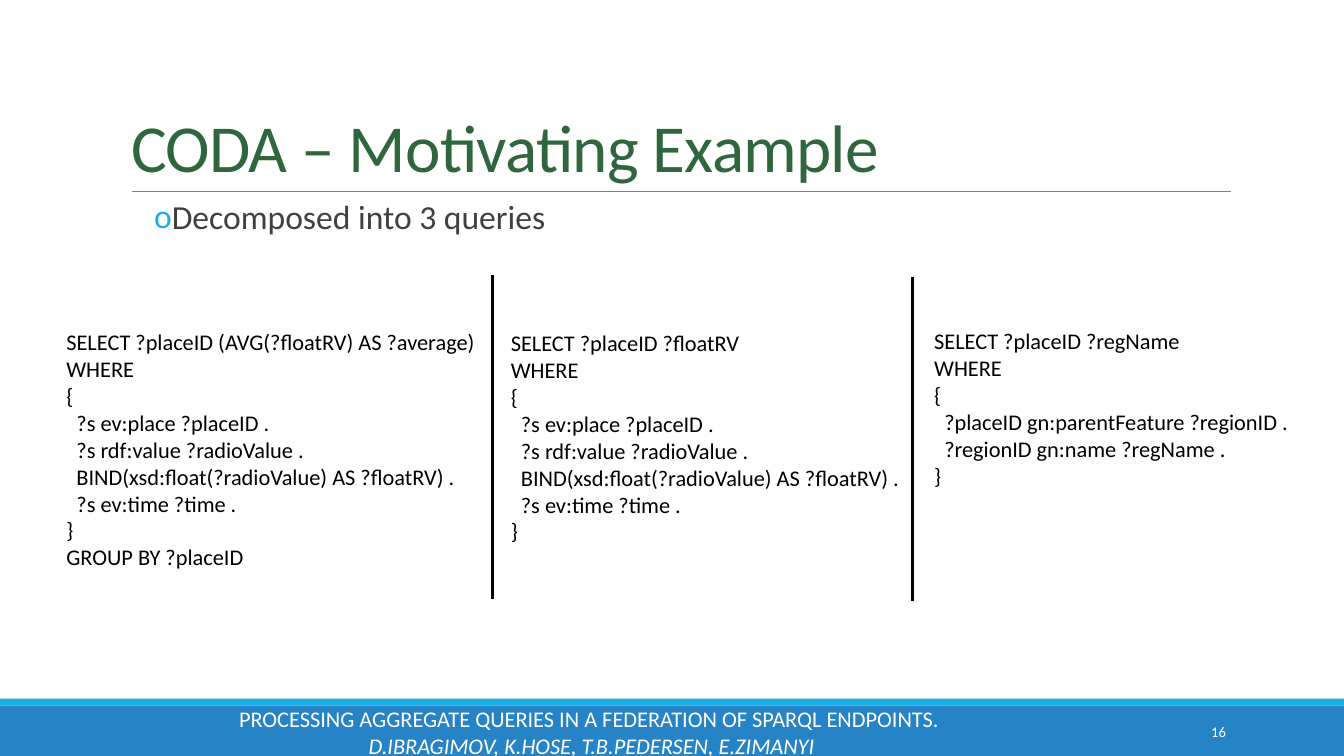
from dataclasses import dataclass

from lxml import etree
from pptx import Presentation
from pptx.dml.color import RGBColor
from pptx.enum.shapes import MSO_CONNECTOR, MSO_SHAPE
from pptx.enum.text import MSO_ANCHOR, MSO_AUTO_SIZE, PP_ALIGN
from pptx.oxml.ns import qn
from pptx.util import Pt

LEFT, CENTER, RIGHT = PP_ALIGN.LEFT, PP_ALIGN.CENTER, PP_ALIGN.RIGHT
TOP, MIDDLE, BOTTOM = MSO_ANCHOR.TOP, MSO_ANCHOR.MIDDLE, MSO_ANCHOR.BOTTOM
RECT, STRAIGHT = MSO_SHAPE.RECTANGLE, MSO_CONNECTOR.STRAIGHT
NO_AUTOSIZE = MSO_AUTO_SIZE.NONE

FONT = "Calibri"
COLORS = {
    "blue": "2683C6",
    "cyan": "1CADE4",
    "green": "2F663E",
    "gray": "808080",
    "dark": "404040",
    "black": "000000",
    "white": "FFFFFF",
}
WIDTH, HEIGHT = 960, 540
QUERY_INDENT = 7.2


@dataclass
class Box:
    left: float
    top: float
    width: float
    height: float


@dataclass
class Line:
    x1: float
    y1: float
    x2: float
    y2: float
    color: str
    weight: float


@dataclass
class Query:
    box: Box
    head: list[str]
    body: list[str]
    tail: list[str]


EVENT_BODY = [
    "?s ev:place ?placeID .",
    "?s rdf:value ?radioValue .",
    "BIND(xsd:float(?radioValue) AS ?floatRV) .",
    "?s ev:time ?time .",
]
REGION_BODY = [
    "?placeID gn:parentFeature ?regionID .",
    "?regionID gn:name ?regName .",
]
QUERIES = [
    Query(Box(40.3, 231.1, 322.6, 181.4),
          ["SELECT ?placeID (AVG(?floatRV) AS ?average) WHERE", "{"],
          EVENT_BODY, ["}", "GROUP BY ?placeID"]),
    Query(Box(357.8, 231.8, 322.6, 162.7),
          ["SELECT ?placeID ?floatRV", "WHERE", "{"], EVENT_BODY, ["}"]),
    Query(Box(660.2, 230.4, 284.4, 123.8),
          ["SELECT ?placeID ?regName", "WHERE", "{"], REGION_BODY, ["}"]),
]
BARS = [(Box(0, 504, WIDTH, 36), "blue"), (Box(0, 499, WIDTH, 5), "cyan")]
TITLE_RULE = Line(94.3, 136.8, 879.1, 136.8, "gray", 0.5)
DIVIDERS = [
    Line(352.1, 196.6, 352.1, 427.7, "black", 2.25),
    Line(651.6, 197.6, 651.6, 429.1, "black", 2.25),
]


def rgb(name: str) -> RGBColor:
    return RGBColor.from_string(COLORS[name])


def place(s, box: Box) -> None:
    s.left, s.top = Pt(box.left), Pt(box.top)
    s.width, s.height = Pt(box.width), Pt(box.height)


def add_bar(slide, box: Box, color: str) -> None:
    s = slide.shapes.add_shape(RECT, Pt(box.left), Pt(box.top),
                               Pt(box.width), Pt(box.height))
    s.shadow.inherit = False
    s.fill.solid()
    s.fill.fore_color.rgb = rgb(color)
    s.line.fill.background()


def add_line(slide, line: Line) -> None:
    s = slide.shapes.add_connector(STRAIGHT, Pt(line.x1), Pt(line.y1),
                                   Pt(line.x2), Pt(line.y2))
    s.line.color.rgb = rgb(line.color)
    s.line.width = Pt(line.weight)
    etree.SubElement(s._element.spPr, qn("a:effectLst"))


def add_run(p, text: str, size: float, color: str, italic: bool = False):
    r = p.add_run()
    r.text = text
    r.font.name, r.font.size = FONT, Pt(size)
    r.font.color.rgb = rgb(color)
    if italic:
        r.font.italic = True
    return r


def add_text_frame(slide, box: Box, anchor=TOP):
    s = slide.shapes.add_textbox(Pt(box.left), Pt(box.top),
                                 Pt(box.width), Pt(box.height))
    tf = s.text_frame
    tf.word_wrap = True
    tf.vertical_anchor = anchor
    return tf


def next_paragraph(tf, index: int):
    """Return the frame's first paragraph for index 0, else a new one."""
    return tf.add_paragraph() if index else tf.paragraphs[0]


def add_query(slide, query: Query) -> None:
    tf = add_text_frame(slide, query.box)
    lines = [(text, 0) for text in query.head]
    lines += [(text, QUERY_INDENT) for text in query.body]
    lines += [(text, 0) for text in query.tail]
    for i, (text, indent) in enumerate(lines):
        p = next_paragraph(tf, i)
        if indent:
            p._p.get_or_add_pPr().set("marL", str(Pt(indent)))
        add_run(p, text, 16, "black")


def set_bullet(p, char: str, color: str, margin: float) -> None:
    pPr = p._p.get_or_add_pPr()
    pPr.set("marL", str(Pt(margin)))
    pPr.set("indent", "0")
    fill = etree.SubElement(pPr, qn("a:buClr"))
    etree.SubElement(fill, qn("a:srgbClr"), val=COLORS[color])
    etree.SubElement(pPr, qn("a:buFont"), typeface=FONT)
    etree.SubElement(pPr, qn("a:buChar"), char=char)


def fill_title(s) -> None:
    place(s, Box(86.4, 22.3, 792, 114.5))
    tf = s.text_frame
    tf.auto_size = NO_AUTOSIZE
    tf.vertical_anchor = BOTTOM
    p = tf.paragraphs[0]
    p.alignment = LEFT
    p.line_spacing = 0.85
    r = add_run(p, "CODA – Motivating Example", 48, "green")
    r.font._element.set("spc", "-50")


def fill_body(s) -> None:
    place(s, Box(83.5, 139.7, 831.6, 37.4))
    tf = s.text_frame
    tf.auto_size = NO_AUTOSIZE
    tf.margin_left = tf.margin_right = 0
    p = tf.paragraphs[0]
    p.line_spacing = 0.9
    p.space_before, p.space_after = Pt(12), Pt(2)
    set_bullet(p, "o", "cyan", 26.6)
    add_run(p, "Decomposed into 3 queries", 24, "dark")


def add_footer(slide) -> None:
    p = add_text_frame(slide, Box(779.8, 508.3, 103, 28.8), MIDDLE).paragraphs[0]
    p.alignment = RIGHT
    add_run(p, "16", 10.5, "white")
    tf = add_text_frame(slide, Box(0, 508.3, 845.3, 28.8), MIDDLE)
    credits = [
        ("PROCESSING AGGREGATE QUERIES IN A FEDERATION OF SPARQL ENDPOINTS. ", False),
        ("D.IBRAGIMOV, K.HOSE, T.B.PEDERSEN, E.ZIMANYI", True),
    ]
    for i, (text, italic) in enumerate(credits):
        p = next_paragraph(tf, i)
        p.alignment = CENTER
        add_run(p, text, 16, "white", italic)


def main() -> None:
    prs = Presentation()
    prs.slide_width, prs.slide_height = Pt(WIDTH), Pt(HEIGHT)
    slide = prs.slides.add_slide(prs.slide_layouts[1])
    for box, color in BARS:
        add_bar(slide, box, color)
    fill_title(slide.shapes.title)
    fill_body(slide.placeholders[1])
    add_footer(slide)
    for query in QUERIES:
        add_query(slide, query)
    for line in [TITLE_RULE, *DIVIDERS]:
        add_line(slide, line)
    prs.save("out.pptx")


if __name__ == "__main__":
    main()
